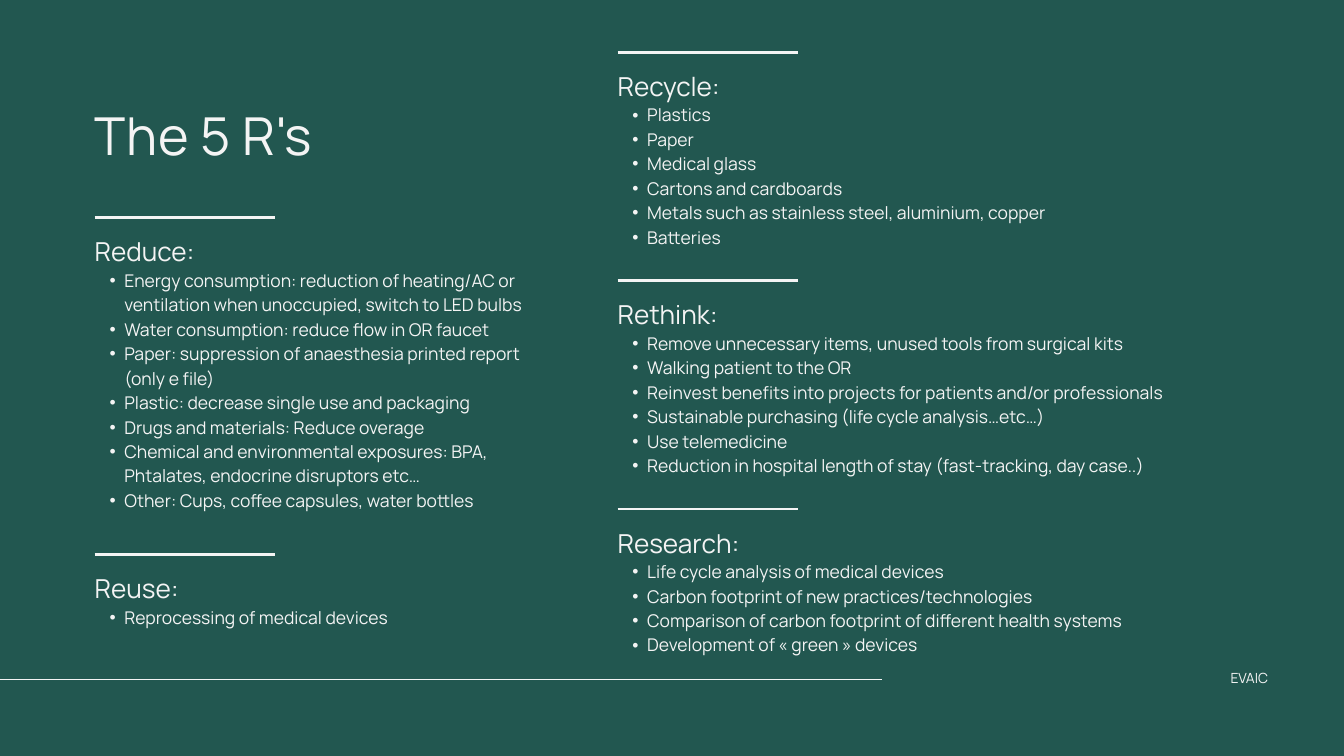
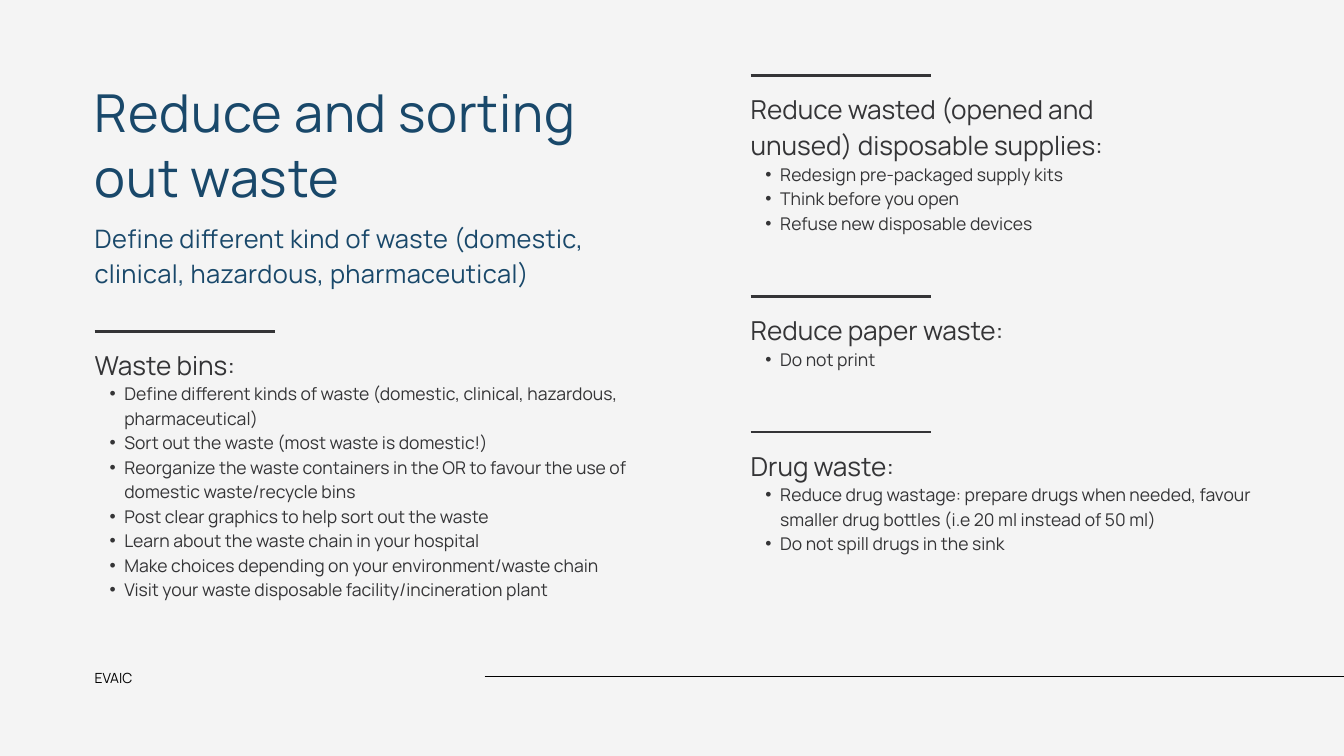
from dataclasses import dataclass

from lxml import etree
from pptx import Presentation
from pptx.dml.color import RGBColor
from pptx.enum import shapes, text
from pptx.oxml import ns
from pptx.util import Inches, Pt

GREEN = RGBColor(0x22, 0x57, 0x50)
PALE = RGBColor(0xF4, 0xF4, 0xF4)
BLUE = RGBColor(0x19, 0x48, 0x6A)
CHARCOAL = RGBColor(0x34, 0x34, 0x36)
BLACK = RGBColor(0, 0, 0)

FONT = "Manrope"
MARGIN = 1.41
RULE_WIDTH = 2.68
HEADING_LINE = 39.2  # points
BODY_LINE = 26.2  # points
FOOTER = "EVAIC"


@dataclass
class Section:
    heading: str
    items: list
    width: float
    body_lines: int
    heading_lines: int = 1

    @property
    def body_offset(self):
        return 0.18 + self.heading_lines * HEADING_LINE / 72

    @property
    def body_height(self):
        return self.body_lines * BODY_LINE / 72 - 0.01

    @property
    def height(self):
        return self.body_offset + self.body_height


def add_line(parent, start, end, color, width):
    line = parent.add_connector(
        shapes.MSO_CONNECTOR.STRAIGHT, *(Inches(value) for value in start + end))
    line.line.color.rgb = color
    line.line.width = Pt(width)
    etree.SubElement(line._element.spPr, ns.qn("a:effectLst"))


def add_bullet(paragraph):
    paragraph.level = 1
    properties = paragraph._p.get_or_add_pPr()
    properties.set("marL", str(Inches(0.44)))
    properties.set("indent", str(Inches(-0.22)))
    font = etree.SubElement(properties, ns.qn("a:buFont"))
    font.set("typeface", "Arial")
    etree.SubElement(properties, ns.qn("a:buChar")).set("char", "•")


def write(shape, lines, size, color, spacing, align=text.PP_ALIGN.LEFT,
          bullets=False, tracking=0):
    """Fill a text shape with one paragraph per line, without insets."""
    frame = shape.text_frame
    frame.word_wrap = True
    frame.auto_size = text.MSO_AUTO_SIZE.SHAPE_TO_FIT_TEXT
    frame.vertical_anchor = text.MSO_ANCHOR.TOP
    frame.margin_left = frame.margin_right = 0
    frame.margin_top = frame.margin_bottom = 0
    for index, line in enumerate(lines):
        paragraph = frame.add_paragraph() if index else frame.paragraphs[0]
        paragraph.alignment = align
        paragraph.line_spacing = Pt(spacing)
        paragraph.space_before = paragraph.space_after = Pt(0)
        if bullets:
            add_bullet(paragraph)
        run = paragraph.add_run()
        run.text = line
        run.font.name = FONT
        run.font.size = Pt(size)
        run.font.color.rgb = color
        if tracking:
            run._r.get_or_add_rPr().set("spc", str(round(tracking * 100)))


def add_text(parent, box, lines, size, color, spacing, **options):
    shape = parent.add_textbox(*(Inches(value) for value in box))
    write(shape, lines, size, color, spacing, **options)


def add_section(slide, left, top, section, color):
    """Place a rule, a heading and its bullet list as one group."""
    group = slide.shapes.add_group_shape().shapes
    add_line(group, (left, top), (left + RULE_WIDTH, top), color, 3)
    add_text(group, (left, top + 0.19, section.width, section.body_offset - 0.21),
             [section.heading], 28, color, HEADING_LINE)
    add_text(group,
             (left, top + section.body_offset, section.width, section.body_height),
             section.items, 18.8, color, BODY_LINE, bullets=True)


def add_column(slide, left, top, gap, sections, color):
    """Stack sections downwards with an equal gap between them."""
    for section in sections:
        add_section(slide, left, top, section, color)
        top += section.height + gap


def add_title_slide(presentation, background, title, box, color):
    """Add a title-only slide with its background and formatted title."""
    slide = presentation.slides.add_slide(presentation.slide_layouts[5])
    slide.background.fill.solid()
    slide.background.fill.fore_color.rgb = background
    shape = slide.shapes.title
    shape.left, shape.top, shape.width, shape.height = (Inches(value) for value in box)
    write(shape, [title], 56, color, 70, tracking=0.8)
    return slide


def add_footer(slide, left, align, color, line_start, line_end, line_top):
    add_line(slide.shapes, (line_start, line_top), (line_end, line_top), color, 0.75)
    add_text(slide.shapes, (left, 9.92, 5.55, 0.29), [FOOTER], 15, color, 21,
             align=align)


def add_five_rs(presentation):
    slide = add_title_slide(presentation, GREEN, "The 5 R's",
                            (MARGIN, 1.49, 4.7, 0.96), PALE)
    add_footer(slide, 13.32, text.PP_ALIGN.RIGHT, PALE, -0.15, 13.13, 10.11)
    add_column(slide, 9.19, 0.78, 0.5, [
        Section("Recycle:", [
            "Plastics",
            "Paper",
            "Medical glass",
            "Cartons and cardboards",
            "Metals such as stainless steel, aluminium, copper",
            "Batteries",
        ], 10.28, 6),
        Section("Rethink:", [
            "Remove unnecessary items, unused tools from surgical kits",
            "Walking patient to the OR",
            "Reinvest benefits into projects for patients and/or professionals",
            "Sustainable purchasing (life cycle analysis…etc…)",
            "Use telemedicine",
            "Reduction in hospital length of stay (fast-tracking, day case..)",
        ], 10.28, 6),
        Section("Research:", [
            "Life cycle analysis of medical devices",
            "Carbon footprint of new practices/technologies",
            "Comparison of carbon footprint of different health systems",
            "Development of « green » devices",
        ], 9.69, 4),
    ], PALE)
    add_column(slide, MARGIN, 3.24, 0.66, [
        Section("Reduce:", [
            "Energy consumption: reduction of heating/AC or ventilation when "
            "unoccupied, switch to LED bulbs",
            "Water consumption: reduce flow in OR faucet",
            "Paper: suppression of anaesthesia printed report (only e file)",
            "Plastic: decrease single use and packaging",
            "Drugs and materials: Reduce overage",
            "Chemical and environmental exposures: BPA, Phtalates, endocrine "
            "disruptors etc…",
            "Other: Cups, coffee capsules, water bottles",
        ], 6.95, 10),
        Section("Reuse:", ["Reprocessing of medical devices"], 5, 1),
    ], PALE)


def add_waste_sorting(presentation):
    slide = add_title_slide(presentation, PALE, "Reduce and sorting out waste",
                            (MARGIN, 1.15, 7.52, 1.93), BLUE)
    add_footer(slide, MARGIN, text.PP_ALIGN.LEFT, BLACK, 7.21, 20, 10.07)
    add_text(slide.shapes, (MARGIN, 3.24, 8.08, 1.02),
             ["Define different kind of waste (domestic, clinical, hazardous, "
              "pharmaceutical)"], 27.2, BLUE, 38.1, tracking=0.4)
    add_column(slide, 11.17, 1.12, 0.94, [
        Section("Reduce wasted (opened and unused) disposable supplies:", [
            "Redesign pre-packaged supply kits",
            "Think before you open",
            "Refuse new disposable devices",
        ], 6.56, 3, heading_lines=2),
        Section("Reduce paper waste:", ["Do not print"], 5.14, 1),
        Section("Drug waste:", [
            "Reduce drug wastage: prepare drugs when needed, favour smaller drug "
            "bottles (i.e 20 ml instead of 50 ml)",
            "Do not spill drugs in the sink",
        ], 7.71, 3),
    ], CHARCOAL)
    add_section(slide, MARGIN, 4.93, Section("Waste bins:", [
        "Define different kinds of waste (domestic, clinical, hazardous, "
        "pharmaceutical)",
        "Sort out the waste (most waste is domestic!)",
        "Reorganize the waste containers in the OR to favour the use of domestic "
        "waste/recycle bins",
        "Post clear graphics to help sort out the waste",
        "Learn about the waste chain in your hospital",
        "Make choices depending on your environment/waste chain",
        "Visit your waste disposable facility/incineration plant",
    ], 8.24, 9), CHARCOAL)


def main():
    presentation = Presentation()
    presentation.slide_width = Inches(20)
    presentation.slide_height = Inches(11.25)
    add_five_rs(presentation)
    add_waste_sorting(presentation)
    presentation.save("out.pptx")


if __name__ == "__main__":
    main()
